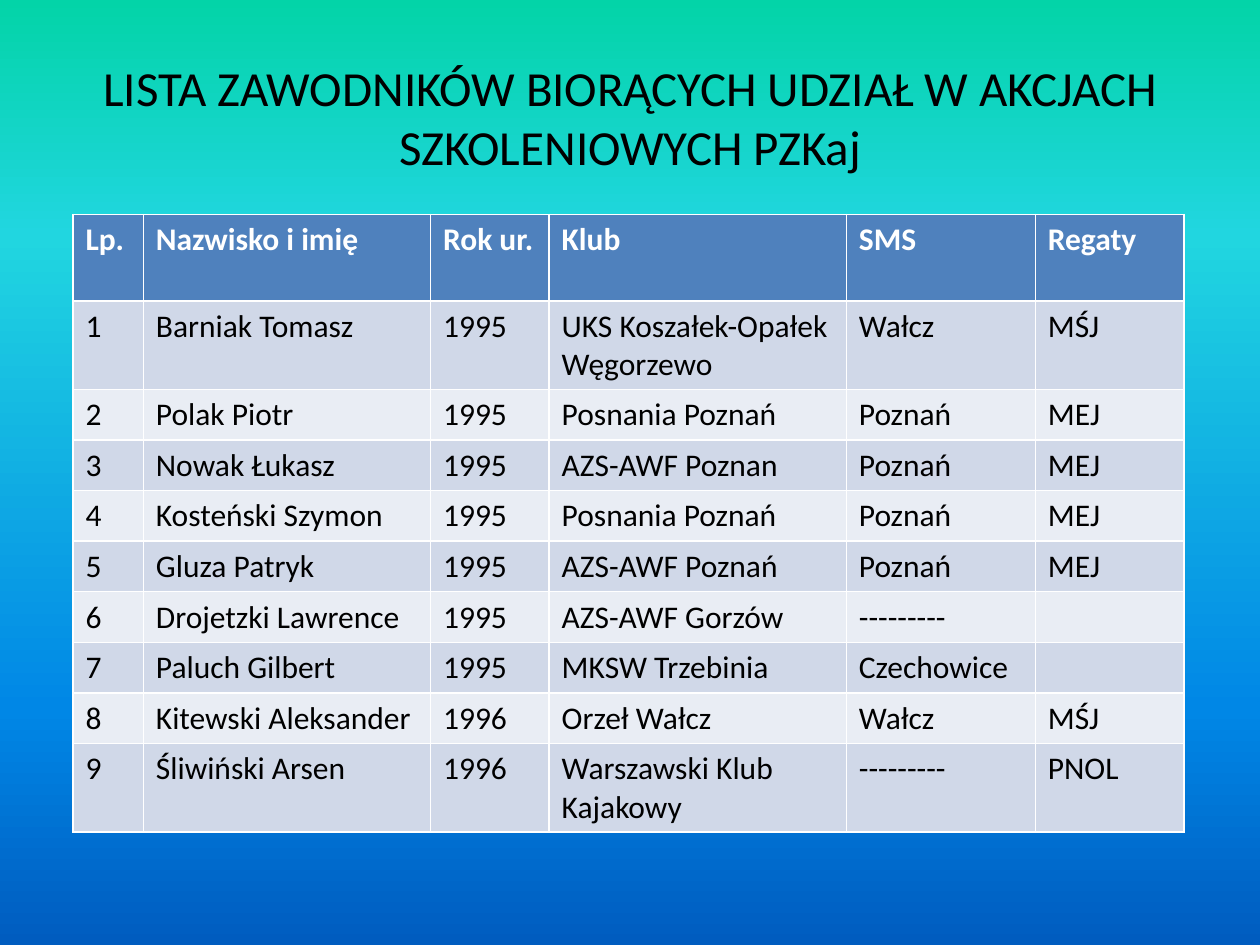
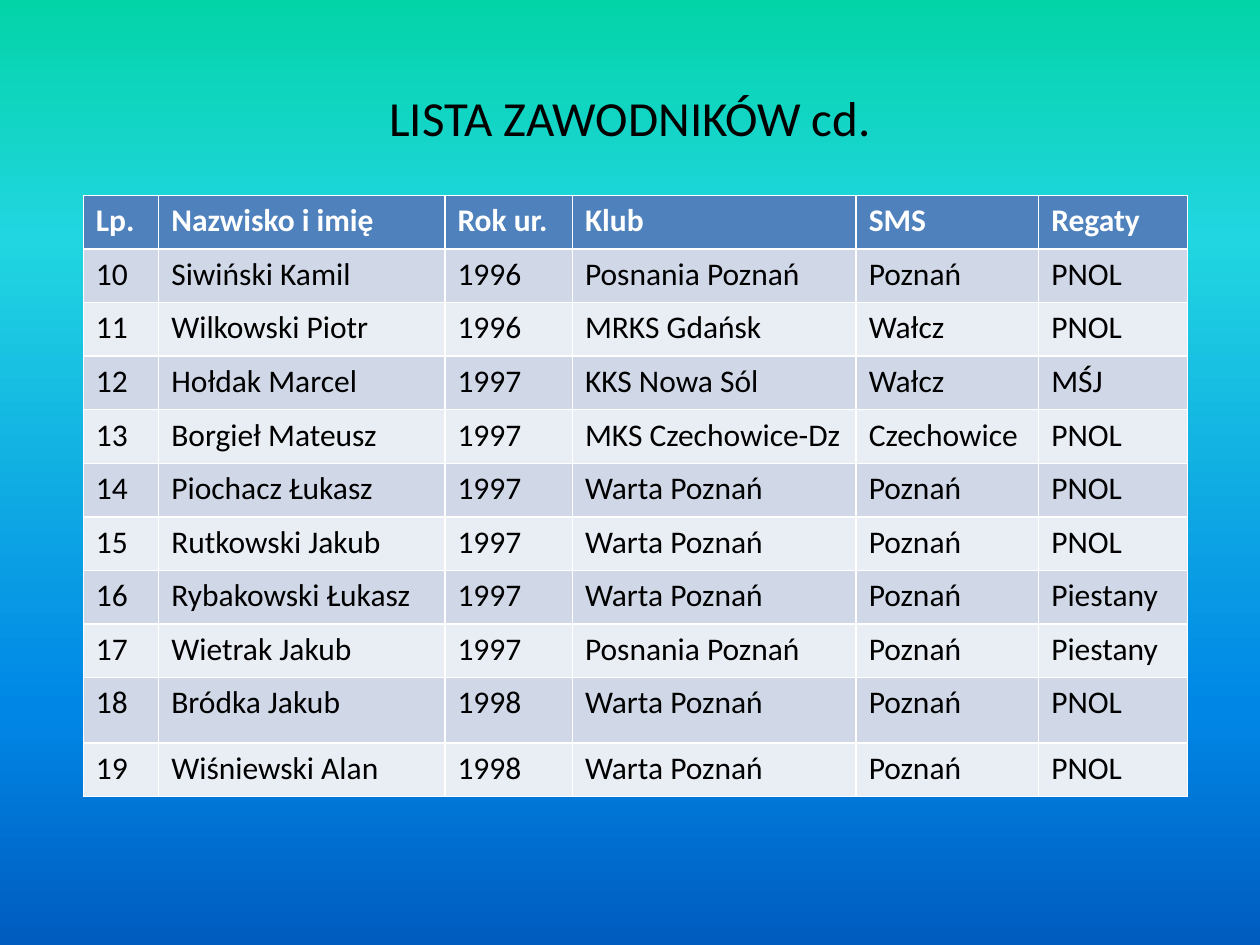
"""Builds two slides listing the athletes who take part in the PZKaj training camps."""
from lxml.etree import SubElement
from pptx import Presentation
from pptx.dml.color import RGBColor
from pptx.enum.text import MSO_ANCHOR, PP_ALIGN
from pptx.oxml.ns import qn
from pptx.util import Cm, Pt


def colour(hex_value):
    return RGBColor.from_string(hex_value)


def write(frame, text, font_format, hex_value):
    frame.text = text
    font = frame.paragraphs[0].runs[0].font
    for attribute, value in font_format.items():
        setattr(font, attribute, value)
    font.color.rgb = colour(hex_value)


BLACK, WHITE = "000000", "FFFFFF"
HEADER_FILL = "4F81BD"
BAND_FILLS = ["E9EDF4", "D0D8E8"]
GRADIENT = {0: "03D4A8", 25: "21D6E0", 75: "0087E6", 100: "005CBF"}
TITLE_FONT = {"name": "Calibri", "size": Pt(28)}
HEADER_FONT = {"name": "Calibri", "size": Pt(18), "bold": True}
BODY_FONT = HEADER_FONT | {"bold": False}
TITLE_FRAME = {"word_wrap": True, "vertical_anchor": MSO_ANCHOR.MIDDLE}
HEADINGS = ("Lp.", "Nazwisko i imię", "Rok ur.", "Klub", "SMS", "Regaty")

pages = [
    {
        "title": "LISTA ZAWODNIKÓW BIORĄCYCH UDZIAŁ W AKCJACH SZKOLENIOWYCH PZKaj",
        "corner": (1.47, 4.32),
        "widths": (1.42, 5.79, 2.39, 5.99, 3.81, 3.0),
        "row_height": 1.02,
        "tall_rows": {0: 1.75, 1: 1.75, 9: 1.75},
        "first_number": 1,
        "athletes": [
            ("Barniak Tomasz", "1995", "UKS Koszałek-Opałek Węgorzewo", "Wałcz", "MŚJ"),
            ("Polak Piotr", "1995", "Posnania Poznań", "Poznań", "MEJ"),
            ("Nowak Łukasz", "1995", "AZS-AWF Poznan", "Poznań", "MEJ"),
            ("Kosteński Szymon", "1995", "Posnania Poznań", "Poznań", "MEJ"),
            ("Gluza Patryk", "1995", "AZS-AWF Poznań", "Poznań", "MEJ"),
            ("Drojetzki Lawrence", "1995", "AZS-AWF Gorzów", "---------", ""),
            ("Paluch Gilbert", "1995", "MKSW Trzebinia", "Czechowice", ""),
            ("Kitewski Aleksander", "1996", "Orzeł Wałcz", "Wałcz", "MŚJ"),
            ("Śliwiński Arsen", "1996", "Warszawski Klub Kajakowy", "---------", "PNOL"),
        ],
    },
    {
        "title": "LISTA ZAWODNIKÓW cd.",
        "corner": (1.68, 3.94),
        "widths": (1.52, 5.77, 2.57, 5.72, 3.68, 3.0),
        "row_height": 1.08,
        "tall_rows": {9: 1.32},
        "first_number": 10,
        "athletes": [
            ("Siwiński Kamil", "1996", "Posnania Poznań", "Poznań", "PNOL"),
            ("Wilkowski Piotr", "1996", "MRKS Gdańsk", "Wałcz", "PNOL"),
            ("Hołdak Marcel", "1997", "KKS Nowa Sól", "Wałcz", "MŚJ"),
            ("Borgieł Mateusz", "1997", "MKS Czechowice-Dz", "Czechowice", "PNOL"),
            ("Piochacz Łukasz", "1997", "Warta Poznań", "Poznań", "PNOL"),
            ("Rutkowski Jakub", "1997", "Warta Poznań", "Poznań", "PNOL"),
            ("Rybakowski Łukasz", "1997", "Warta Poznań", "Poznań", "Piestany"),
            ("Wietrak Jakub", "1997", "Posnania Poznań", "Poznań", "Piestany"),
            ("Bródka Jakub", "1998", "Warta Poznań", "Poznań", "PNOL"),
            ("Wiśniewski Alan", "1998", "Warta Poznań", "Poznań", "PNOL"),
        ],
    },
]

deck = Presentation()
deck.slide_width, deck.slide_height = Cm(25.4), Cm(19.05)

backdrop = deck.slide_master.background.fill
backdrop.gradient()
backdrop.gradient_angle = 270
stops = deck.slide_master.element.cSld.find(".//" + qn("a:gsLst"))
for default_stop in list(stops):
    stops.remove(default_stop)
for percent, hex_value in GRADIENT.items():
    stop = SubElement(stops, qn("a:gs"), pos=str(percent * 1000))
    SubElement(stop, qn("a:srgbClr"), val=hex_value)

for page in pages:
    slide = deck.slides.add_slide(deck.slide_layouts[6])

    title = slide.shapes.add_textbox(Cm(1.27), Cm(0.76), Cm(22.86), Cm(3.18)).text_frame
    for attribute, value in TITLE_FRAME.items():
        setattr(title, attribute, value)
    write(title, page["title"], TITLE_FONT, BLACK)
    title.paragraphs[0].alignment = PP_ALIGN.CENTER

    numbered = [(str(number), *athlete)
                for number, athlete in enumerate(page["athletes"], page["first_number"])]
    lines = [HEADINGS, *numbered]
    heights = [page["tall_rows"].get(i, page["row_height"]) for i in range(len(lines))]
    left, top = page["corner"]
    roster = slide.shapes.add_table(
        len(lines), len(HEADINGS), Cm(left), Cm(top),
        Cm(sum(page["widths"])), Cm(sum(heights))).table
    for column, width in zip(roster.columns, page["widths"]):
        column.width = Cm(width)

    for i, line in enumerate(lines):
        roster.rows[i].height = Cm(heights[i])
        if i == 0:
            fill, font_format, ink = HEADER_FILL, HEADER_FONT, WHITE
        else:
            fill, font_format, ink = BAND_FILLS[i % 2], BODY_FONT, BLACK
        for cell, entry in zip(roster.rows[i].cells, line):
            cell.fill.solid()
            cell.fill.fore_color.rgb = colour(fill)
            if entry:
                write(cell.text_frame, entry, font_format, ink)

deck.save("out.pptx")
